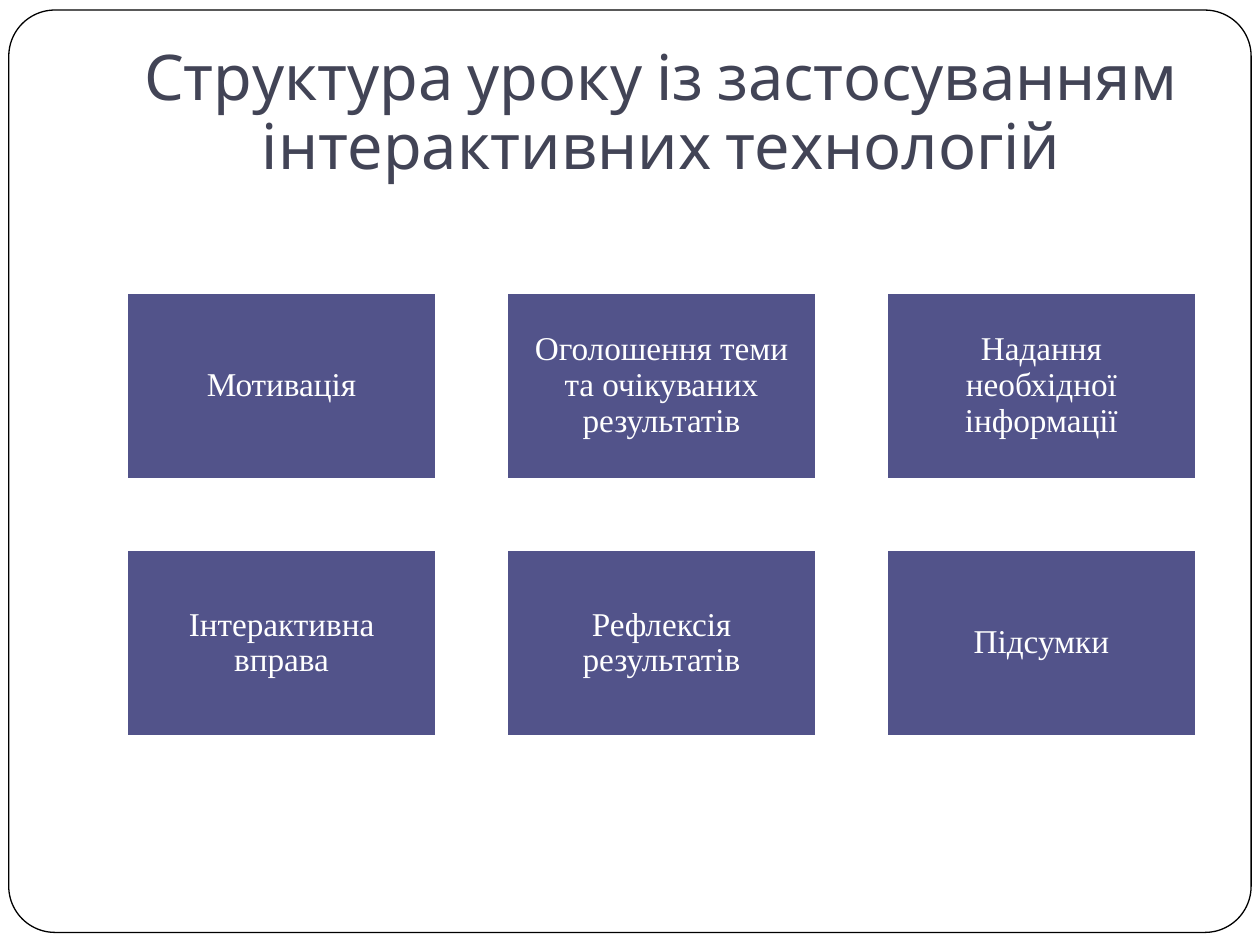
from dataclasses import dataclass

from pptx import Presentation
from pptx.dml.color import RGBColor
from pptx.enum.shapes import MSO_SHAPE as Preset
from pptx.enum.text import MSO_ANCHOR as Anchor, PP_ALIGN as Align
from pptx.util import Inches, Pt


@dataclass(frozen=True)
class Theme:
    paper: RGBColor = RGBColor.from_string("FFFFFF")
    frame: RGBColor = RGBColor.from_string("000000")
    heading: RGBColor = RGBColor.from_string("424456")
    step: RGBColor = RGBColor.from_string("52538A")
    heading_font: str = "Cabin"
    step_font: str = "Times New Roman"
    heading_size: float = 36
    step_size: float = 19


@dataclass(frozen=True)
class Grid:
    """Equal cells: origin, cell size and pitch in inches."""
    left: float
    top: float
    width: float
    height: float
    column_pitch: float
    row_pitch: float
    columns: int

    def cell(self, index):
        row, column = divmod(index, self.columns)
        return (self.left + column * self.column_pitch,
                self.top + row * self.row_pitch, self.width, self.height)


def apply(target, values):
    for name, value in values.items():
        setattr(target, name, value)


class SlideBuilder:
    def __init__(self, slide, theme):
        self.slide = slide
        self.theme = theme

    def box(self, preset, area, fill, line, line_width):
        shape = self.slide.shapes.add_shape(preset, *map(Inches, area))
        shape.shadow.inherit = False
        shape.fill.solid()
        shape.fill.fore_color.rgb = fill
        shape.line.color.rgb = line
        shape.line.width = Pt(line_width)
        return shape

    def set_text(self, shape, text, frame_format, paragraph_format, font_format, color):
        apply(shape.text_frame, {"word_wrap": True, **frame_format})
        paragraph = shape.text_frame.paragraphs[0]
        apply(paragraph, {"alignment": Align.CENTER, "line_spacing": 0.9,
                          **paragraph_format})
        run = paragraph.add_run()
        run.text = text
        apply(run.font, font_format)
        run.font.color.rgb = color

    def frame(self, area, corner):
        theme = self.theme
        shape = self.box(Preset.ROUNDED_RECTANGLE, area, theme.paper, theme.frame, 0.75)
        shape.adjustments[0] = corner

    def heading(self, area, text):
        theme = self.theme
        shape = self.slide.shapes.add_textbox(*map(Inches, area))
        self.set_text(shape, text,
                      {"vertical_anchor": Anchor.BOTTOM, "margin_bottom": Inches(0.1)}, {},
                      {"name": theme.heading_font, "size": Pt(theme.heading_size)},
                      theme.heading)

    def step(self, area, text):
        theme = self.theme
        shape = self.box(Preset.RECTANGLE, area, theme.step, theme.paper, 1)
        margins = {f"margin_{side}": Inches(0.15)
                   for side in ("left", "top", "right", "bottom")}
        self.set_text(shape, text, {"vertical_anchor": Anchor.MIDDLE, **margins},
                      {"space_after": Pt(6.7)},
                      {"name": theme.step_font, "size": Pt(theme.step_size)},
                      theme.paper)


STEPS = (
    "Мотивація",
    "Оголошення теми та очікуваних результатів",
    "Надання необхідної інформації",
    "Інтерактивна вправа",
    "Рефлексія результатів",
    "Підсумки",
)


def main():
    presentation = Presentation()
    apply(presentation, {"slide_width": Inches(10), "slide_height": Inches(7.5)})
    slide = presentation.slides.add_slide(presentation.slide_layouts[6])
    builder = SlideBuilder(slide, Theme())

    # Page frame and heading
    builder.frame((0.07, 0.08, 9.86, 7.32), 0.05)
    builder.heading((1, 0.3, 8.5, 1.25),
                    "Структура уроку із застосуванням інтерактивних технологій")

    # Lesson steps, three to a row
    grid = Grid(left=1.01, top=2.33, width=2.45, height=1.47,
                column_pitch=3.015, row_pitch=2.04, columns=3)
    for index, text in enumerate(STEPS):
        builder.step(grid.cell(index), text)

    presentation.save("out.pptx")


if __name__ == "__main__":
    main()
